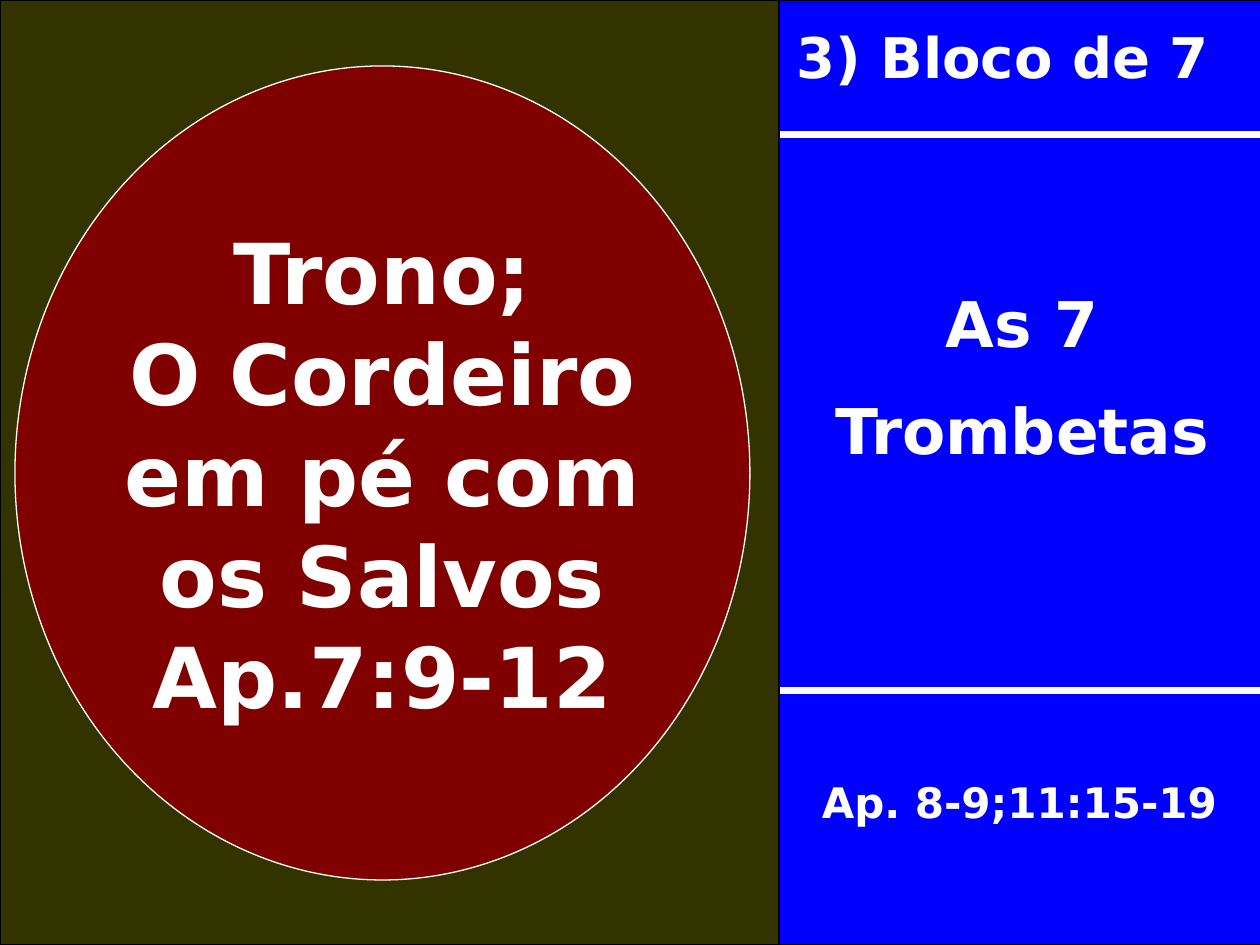
from lxml import etree
from pptx import Presentation
from pptx.dml.color import RGBColor
from pptx.enum.shapes import MSO_CONNECTOR, MSO_SHAPE
from pptx.enum.text import MSO_ANCHOR, MSO_AUTO_SIZE, PP_ALIGN
from pptx.oxml.ns import qn
from pptx.util import Emu, Pt

LEFT, CENTER = PP_ALIGN.LEFT, PP_ALIGN.CENTER
TOP, MIDDLE = MSO_ANCHOR.TOP, MSO_ANCHOR.MIDDLE
RECTANGLE, OVAL = MSO_SHAPE.RECTANGLE, MSO_SHAPE.OVAL
STRAIGHT = MSO_CONNECTOR.STRAIGHT
FIT_SHAPE = MSO_AUTO_SIZE.SHAPE_TO_FIT_TEXT
NO_FIT = MSO_AUTO_SIZE.NONE

EMU_PER_PX = 914400 // 126
WIDTH, HEIGHT = 1260, 945
PANEL_LEFT = 779
FONT = "DejaVu Sans"
COLORS = {
    "olive": "333300",
    "maroon": "800000",
    "blue": "0000FF",
    "black": "000000",
    "white": "FFFFFF",
}


def px(*lengths):
    return [Emu(length * EMU_PER_PX) for length in lengths]


def color(name):
    return RGBColor.from_string(COLORS[name])


class SlideBuilder:
    def __init__(self, presentation):
        self.slide = presentation.slides.add_slide(presentation.slide_layouts[5])
        self.shapes = self.slide.shapes

    def shape(self, kind, box, fill, line):
        shape = self.shapes.add_shape(kind, *px(*box))
        shape.shadow.inherit = False
        shape.fill.solid()
        shape.fill.fore_color.rgb = color(fill)
        shape.line.color.rgb = color(line)
        shape.line.width = Pt(0.75)
        return shape

    def rule(self, left, right, y):
        line = self.shapes.add_connector(STRAIGHT, *px(left, y, right, y))
        line.line.color.rgb = color("white")
        line.line.width = Pt(4)
        etree.SubElement(line._element.spPr, qn("a:effectLst"))

    def set_text(self, shape, lines, size, align=CENTER, anchor=TOP, spaced=True):
        frame = shape.text_frame
        frame.text = "\n".join(lines)
        frame.word_wrap = spaced
        frame.auto_size = FIT_SHAPE if spaced else NO_FIT
        frame.vertical_anchor = anchor
        for paragraph in frame.paragraphs:
            paragraph.alignment = align
            paragraph.line_spacing = 1.0
            paragraph.font.name = FONT
            paragraph.font.size = Pt(size)
            paragraph.font.bold = True
            paragraph.font.color.rgb = color("white")
            if spaced:  # half a line before each paragraph
                before = paragraph._p.get_or_add_pPr().get_or_add_spcBef()
                etree.SubElement(before, qn("a:spcPct"), val="50000")

    def text(self, box, lines, size):
        self.set_text(self.shapes.add_textbox(*px(*box)), lines, size)

    def title(self, box, text, size):
        title = self.shapes.title
        title.left, title.top, title.width, title.height = px(*box)
        self.set_text(title, [text], size, align=LEFT)
        self.shapes._spTree.append(title._element)  # bring to front


def main():
    presentation = Presentation()
    presentation.slide_width, presentation.slide_height = px(WIDTH, HEIGHT)
    builder = SlideBuilder(presentation)

    # Right panel with its dividers
    builder.shape(RECTANGLE, (PANEL_LEFT, 0, 486, HEIGHT), "blue", "black")
    builder.rule(PANEL_LEFT, 1265, 135)
    builder.rule(769, 1266, 691)

    # Left panel with the throne circle
    builder.shape(RECTANGLE, (0, 0, PANEL_LEFT, HEIGHT), "olive", "black")
    circle = builder.shape(OVAL, (15, 66, 735, 814), "maroon", "white")
    throne = ["Trono;", "O Cordeiro", "em pé com", "os Salvos", "Ap.7:9-12"]
    builder.set_text(circle, throne, 48, anchor=MIDDLE, spaced=False)

    # Right panel texts
    builder.title((784, 16, 471, 79), "3) Bloco de 7", 32)
    builder.text((799, 278, 446, 202), ["As 7", "Trombetas"], 36)
    builder.text((774, 770, 491, 63), ["Ap. 8-9;11:15-19"], 24)

    presentation.save("out.pptx")


if __name__ == "__main__":
    main()
